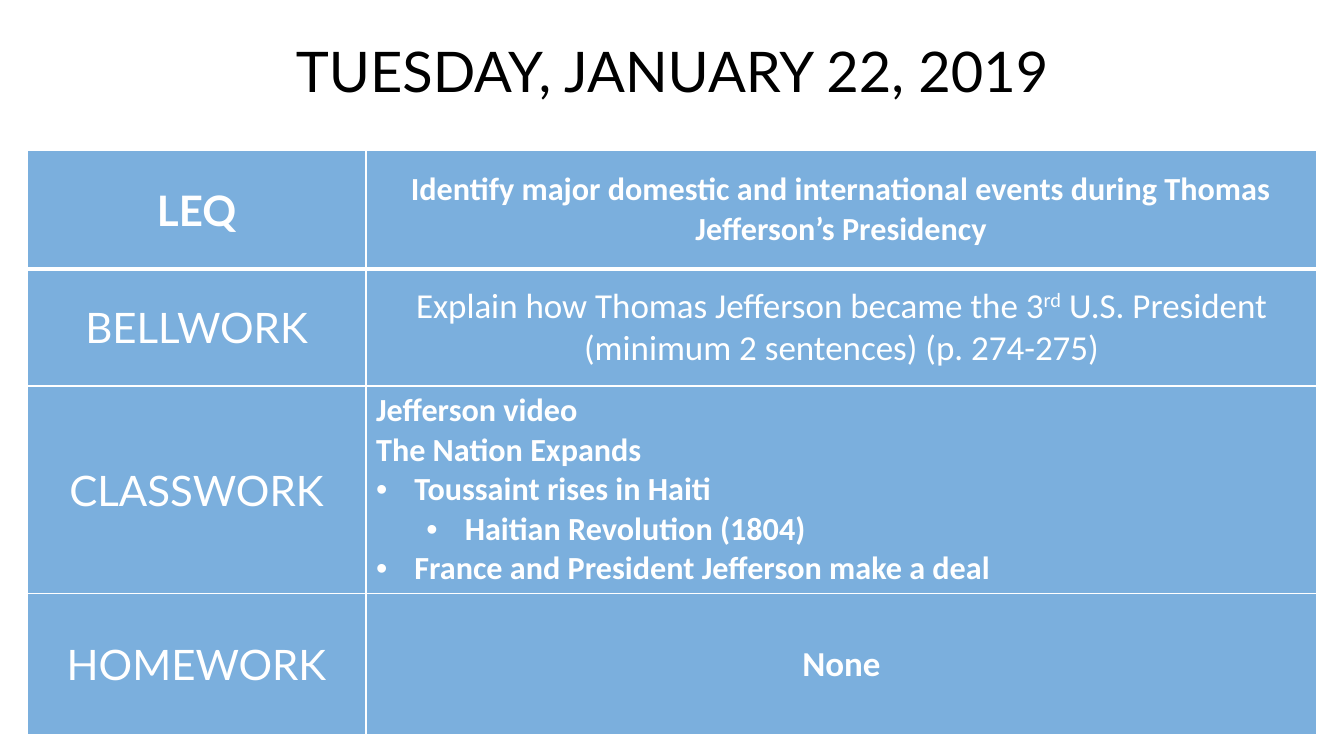
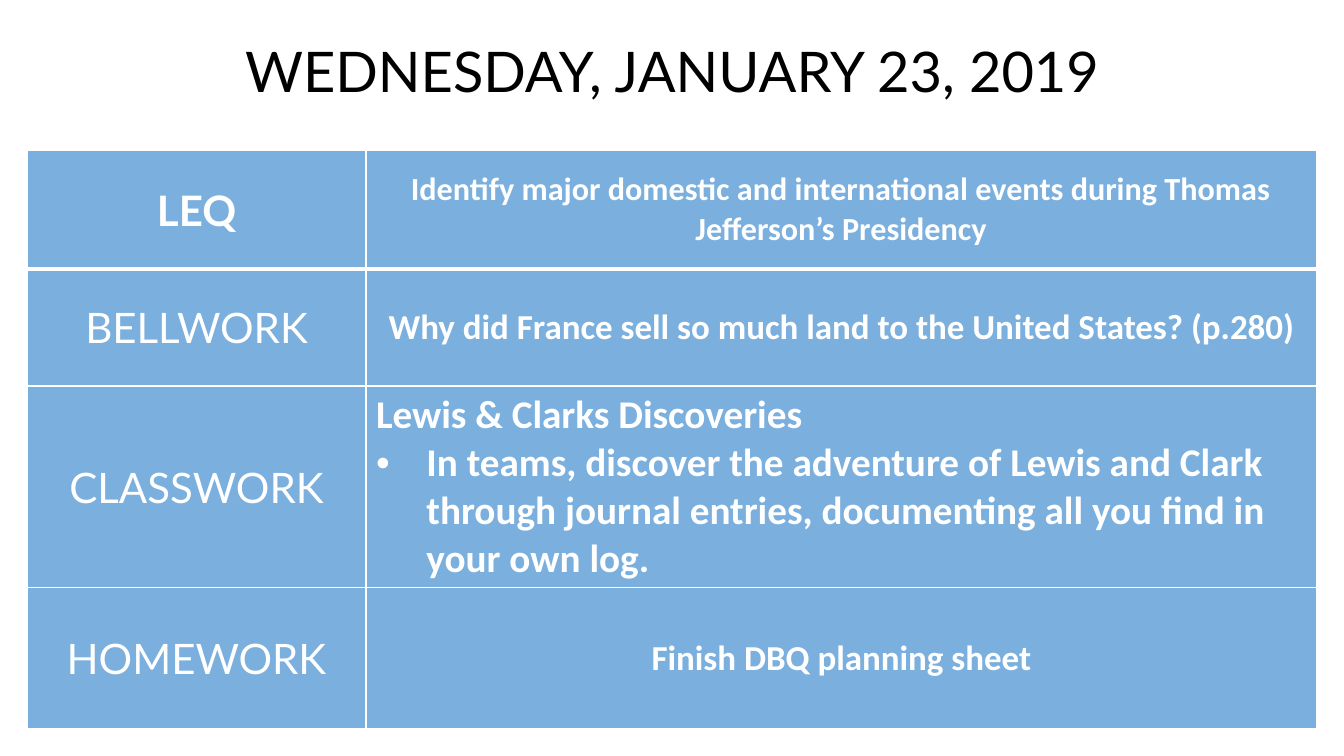
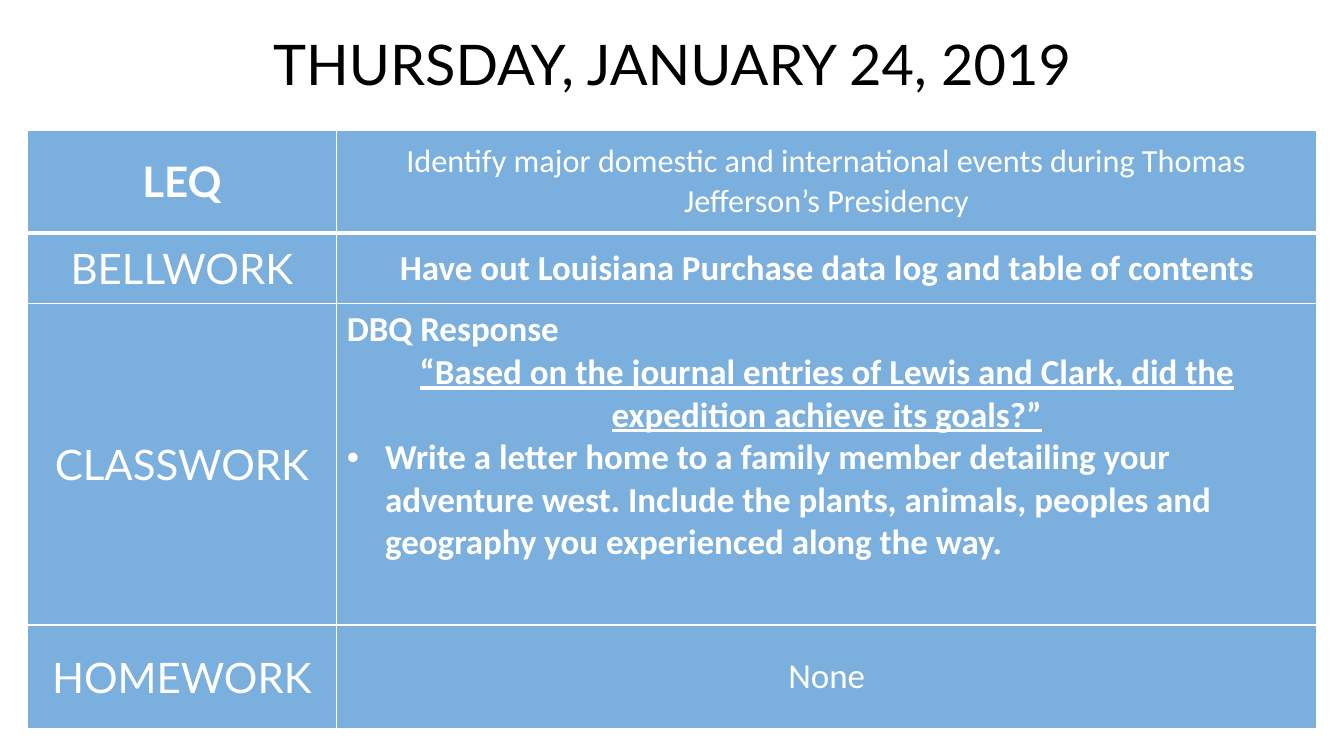
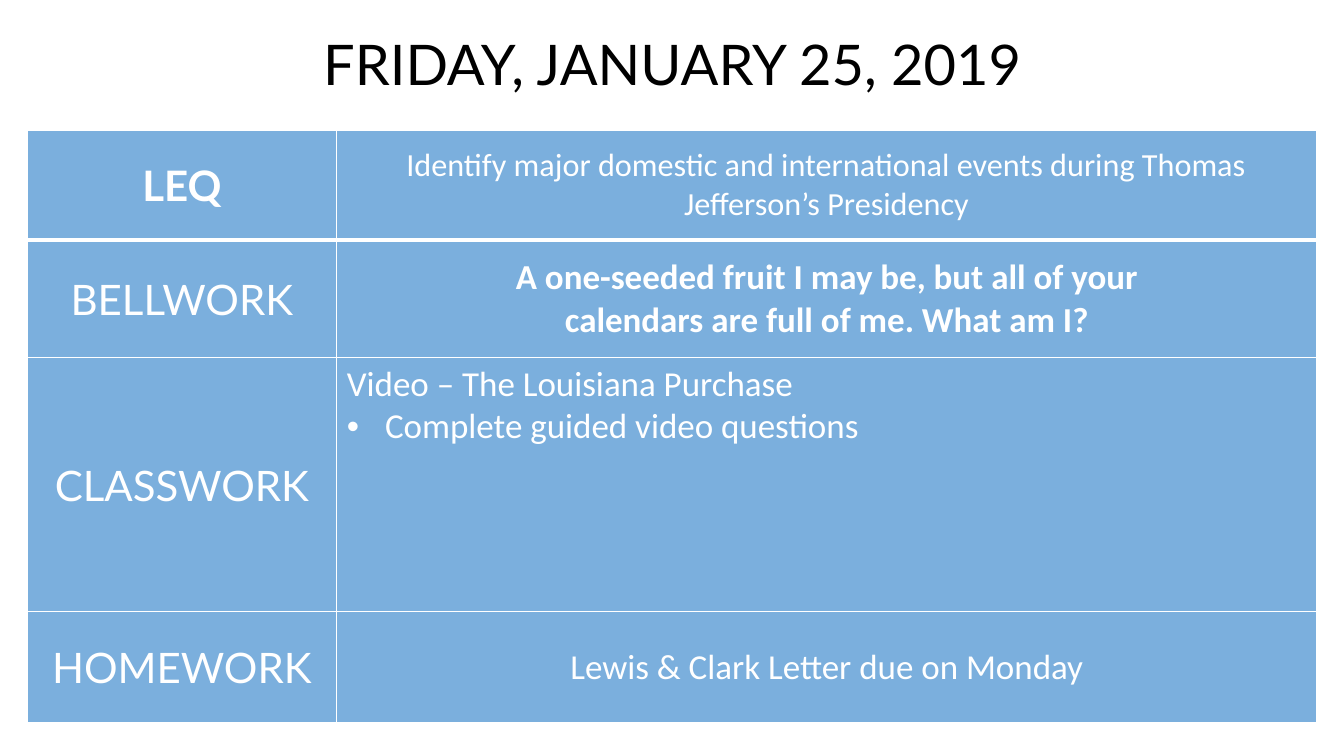
from dataclasses import dataclass
from typing import Any

from lxml import etree
from pptx import Presentation
from pptx import util as u
from pptx.dml.color import RGBColor
from pptx.enum import text
from pptx.oxml.ns import qn


@dataclass(frozen=True)
class Theme:
    cell: RGBColor = RGBColor(0x5B, 0x9B, 0xD5)
    white: RGBColor = RGBColor(0xFF, 0xFF, 0xFF)
    black: RGBColor = RGBColor(0, 0, 0)
    cell_opacity: int = 80
    title_opacity: int = 65
    heading_font: str = "Lato"
    body_font: str = "Calibri"
    title_size: int = 40
    label_size: int = 30
    large_size: int = 28
    body_size: int = 25
    small_size: int = 23
    thin_border: int = 1
    header_border: int = 3


THEME = Theme()
LEFT, WIDTH, TITLE_HEIGHT = 0.27, 12.79, 1
LABELS = ("LEQ", "BELLWORK", "CLASSWORK", "HOMEWORK")
CENTER, START = text.PP_ALIGN.CENTER, text.PP_ALIGN.LEFT


@dataclass(frozen=True)
class Span:
    words: str
    underline: bool = False
    superscript: bool = False


@dataclass(frozen=True)
class Line:
    """A paragraph; a hanging indent above zero gives it a bullet."""
    spans: tuple[Span, ...]
    align: text.PP_ALIGN = START
    hang: float = 0
    level: int = 0


@dataclass(frozen=True)
class Content:
    lines: tuple[Line, ...]
    size: int = THEME.body_size
    bold: bool = True
    font: str = THEME.body_font
    anchor: text.MSO_ANCHOR = text.MSO_ANCHOR.MIDDLE


@dataclass(frozen=True)
class Arrangement:
    title_top: float
    table_top: float
    label_width: float


@dataclass(frozen=True)
class Day:
    date: str
    arrangement: Arrangement
    row_heights: tuple[float, ...]
    contents: tuple[Content, ...]


def plain(words: str) -> Line:
    return Line((Span(words),))


def bullet(words: str, hang: float = 0.38, level: int = 0) -> Line:
    return Line((Span(words),), hang=hang, level=level)


def centered(*lines: str, **format_values: Any) -> Content:
    return Content(tuple(Line((Span(words),), CENTER) for words in lines), **format_values)


def classwork(*lines: Line, **format_values: Any) -> Content:
    return Content(lines, anchor=text.MSO_ANCHOR.TOP, **format_values)


def question(bold: bool) -> Content:
    return centered("Identify major domestic and international events during Thomas "
                    "Jefferson’s Presidency", size=THEME.small_size, bold=bold)


EARLY_WEEK = Arrangement(title_top=0.2, table_top=1.49, label_width=3.36)
LATE_WEEK = Arrangement(title_top=0.13, table_top=1.29, label_width=3.07)

DAYS = (
    Day("TUESDAY, JANUARY 22, 2019", EARLY_WEEK, (1.18, 1.16, 2.06, 1.4), (
        question(bold=True),
        Content((Line((
            Span("Explain how Thomas Jefferson became the 3"),
            Span("rd", superscript=True),
            Span(" U.S. President (minimum 2 sentences) (p. 274-275)"),
        ), CENTER),), bold=False),
        classwork(
            plain("Jefferson video"),
            plain("The Nation Expands"),
            bullet("Toussaint rises in Haiti"),
            bullet("Haitian Revolution (1804)", level=1),
            bullet("France and President Jefferson make a deal"),
            size=THEME.small_size),
        centered("None"),
    )),
    Day("WEDNESDAY, JANUARY 23, 2019", EARLY_WEEK, (1.18, 1.16, 1.96, 1.4), (
        question(bold=True),
        centered("Why did France sell so much land to the United States? (p.280)"),
        classwork(
            plain("Lewis & Clarks Discoveries"),
            bullet("In teams, discover the adventure of Lewis and Clark through journal "
                   "entries, documenting all you find in your own log.", hang=0.5),
            size=THEME.large_size),
        centered("Finish DBQ planning sheet"),
    )),
    Day("THURSDAY, JANUARY 24, 2019", LATE_WEEK, (1.02, 0.7, 3.19, 1.03), (
        question(bold=False),
        centered("Have out Louisiana Purchase data log and table of contents"),
        classwork(
            plain("DBQ Response"),
            Line((Span("“Based on the journal entries of Lewis and Clark, did the "
                       "expedition achieve its goals?”", underline=True),), CENTER),
            bullet("Write a letter home to a family member detailing your adventure west. "
                   "Include the plants, animals, peoples and geography you experienced "
                   "along the way.")),
        centered("None", bold=False),
    )),
    Day("FRIDAY, JANUARY 25, 2019", LATE_WEEK, (1.09, 1.17, 2.52, 1.1), (
        question(bold=False),
        centered("A one-seeded fruit I may be, but all of your",
                 "calendars are full of me. What am I?"),
        classwork(
            plain("Video – The Louisiana Purchase"),
            bullet("Complete guided video questions"),
            bold=False),
        centered("Lewis & Clark Letter due on Monday", bold=False),
    )),
)


def set_values(target: Any, values: dict[str, Any]) -> None:
    for name, value in values.items():
        setattr(target, name, value)


def set_fill(target: Any, properties: Any, color: RGBColor, opacity: int) -> None:
    """Fill a shape or cell, whose XML properties then take the opacity in percent."""
    target.fill.solid()
    target.fill.fore_color.rgb = color
    paint = properties.find(qn("a:solidFill")).find(qn("a:srgbClr"))
    etree.SubElement(paint, qn("a:alpha"), val=str(opacity * 1000))


def set_borders(properties: Any, row: int) -> None:
    """Draw thin borders, with a thick one between the first two rows."""
    thick_sides = {0: "B", 1: "T"}
    for side in "LRTB":
        points = THEME.header_border if thick_sides.get(row) == side else THEME.thin_border
        border = etree.SubElement(properties, qn(f"a:ln{side}"), w=str(int(u.Pt(points))))
        paint = etree.SubElement(border, qn("a:solidFill"))
        etree.SubElement(paint, qn("a:srgbClr"), val=str(THEME.white))


def set_bullet(para: Any, line: Line) -> None:
    properties = para._p.get_or_add_pPr()
    properties.set("marL", str(int(u.Inches(line.hang + 0.5 * line.level))))
    properties.set("indent", str(int(u.Inches(-line.hang))))
    etree.SubElement(properties, qn("a:buFont"), typeface="Arial")
    etree.SubElement(properties, qn("a:buChar"), char="•")


def write_content(frame: Any, content: Content, color: RGBColor) -> None:
    for index, line in enumerate(content.lines):
        para = frame.add_paragraph() if index else frame.paragraphs[0]
        set_values(para, {"alignment": line.align, "level": line.level})
        if line.hang:
            set_bullet(para, line)
        for part in line.spans:
            span = para.add_run()
            span.text = part.words
            set_values(span.font, {"name": content.font, "size": u.Pt(content.size),
                                   "bold": content.bold, "underline": part.underline})
            span.font.color.rgb = color
            if part.superscript:
                span._r.get_or_add_rPr().set("baseline", "30000")


def draw_title(page: Any, day: Day) -> None:
    title = page.shapes.title
    set_values(title, {"left": u.Inches(LEFT), "top": u.Inches(day.arrangement.title_top),
                       "width": u.Inches(WIDTH), "height": u.Inches(TITLE_HEIGHT)})
    set_fill(title, title._element.spPr, THEME.white, THEME.title_opacity)
    set_values(title.text_frame, {"word_wrap": True, "auto_size": text.MSO_AUTO_SIZE.NONE,
                                  "vertical_anchor": text.MSO_ANCHOR.MIDDLE})
    write_content(title.text_frame,
                  centered(day.date, size=THEME.title_size, bold=False,
                           font=THEME.heading_font), THEME.black)


def draw_agenda(page: Any, day: Day) -> None:
    arrangement = day.arrangement
    agenda = page.shapes.add_table(
        len(LABELS), 2, u.Inches(LEFT), u.Inches(arrangement.table_top),
        u.Inches(WIDTH), u.Inches(sum(day.row_heights))).table
    set_values(agenda, {"first_row": False, "horz_banding": False})
    agenda.columns[0].width = u.Inches(arrangement.label_width)
    agenda.columns[1].width = u.Inches(WIDTH - arrangement.label_width)
    for row, (label, height, content) in enumerate(
            zip(LABELS, day.row_heights, day.contents)):
        agenda.rows[row].height = u.Inches(height)
        heading = centered(label, size=THEME.label_size, bold=row == 0,
                           font=THEME.heading_font)
        for column, entry in enumerate((heading, content)):
            cell = agenda.cell(row, column)
            properties = cell._tc.get_or_add_tcPr()
            set_borders(properties, row)
            set_fill(cell, properties, THEME.cell, THEME.cell_opacity)
            cell.vertical_anchor = entry.anchor
            write_content(cell.text_frame, entry, THEME.white)


def main() -> None:
    deck = Presentation()
    set_values(deck, {"slide_width": u.Inches(13.33), "slide_height": u.Inches(7.5)})
    title_only = deck.slide_layouts[5]
    for day in DAYS:
        page = deck.slides.add_slide(title_only)
        draw_title(page, day)
        draw_agenda(page, day)
    deck.save("out.pptx")


if __name__ == "__main__":
    main()
